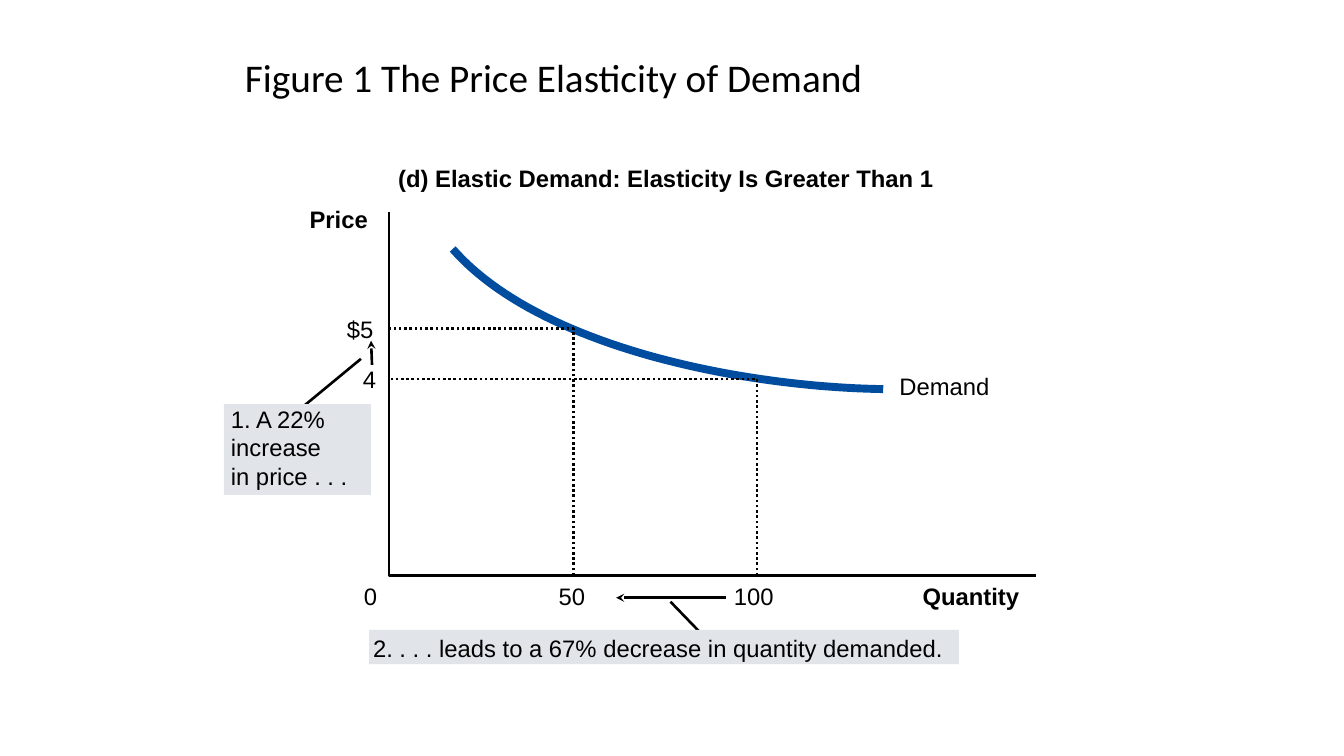
from collections import namedtuple
from dataclasses import dataclass

from lxml.etree import SubElement
from pptx import Presentation
from pptx.dml.color import RGBColor
from pptx.enum.dml import MSO_LINE
from pptx.enum.shapes import MSO_CONNECTOR, MSO_SHAPE
from pptx.enum.text import MSO_ANCHOR, MSO_AUTO_SIZE, PP_ALIGN
from pptx.oxml.ns import qn
from pptx.util import Pt

PX = 9144  # 100 px to the inch
Box = namedtuple("Box", "x y w h")


@dataclass(frozen=True)
class Theme:
    ink: RGBColor = RGBColor(0, 0, 0)
    curve: RGBColor = RGBColor(0x00, 0x4C, 0x9F)
    note: RGBColor = RGBColor(0xE1, 0xE5, 0xE9)
    title_font: str = "Calibri"
    font: str = "Arial"
    title_size: Pt = Pt(28)
    size: Pt = Pt(17)
    pitch: Pt = Pt(20.5)
    thin: Pt = Pt(1.88)
    thick: Pt = Pt(5.63)


T = Theme()


def emu(*lengths):
    return [round(v * PX) for v in lengths]


def add_run(p, text, size=T.size, font=T.font, bold=False):
    r = p.add_run()
    r.text = text
    r.font.size, r.font.name, r.font.bold = size, font, bold
    r.font.color.rgb = T.ink


def set_insets(tf, left=0, top=0):
    tf.margin_left, tf.margin_top = emu(left, top)
    tf.margin_right = tf.margin_bottom = 0


def add_label(s, x, y, w, text, bold=False):
    tf = s.shapes.add_textbox(*emu(x, y, w, 29)).text_frame
    set_insets(tf)
    tf.word_wrap = False
    tf.auto_size = MSO_AUTO_SIZE.SHAPE_TO_FIT_TEXT
    add_run(tf.paragraphs[0], text, bold=bold)


def add_path(s, points, color=T.ink, width=T.thin, dash=None):
    """Draw an open outline through points given in px."""
    start, *rest = [tuple(emu(*point)) for point in points]
    builder = s.shapes.build_freeform(*start)
    builder.add_line_segments(rest, close=False)
    sp = builder.convert_to_shape()
    sp.shadow.inherit = False
    sp.fill.background()
    sp.line.color.rgb, sp.line.width = color, width
    if dash:
        sp.line.dash_style = dash


def add_line(s, x1, y1, x2, y2, arrow=False):
    """Draw a straight line, with an optional arrowhead at its end."""
    line = s.shapes.add_connector(MSO_CONNECTOR.STRAIGHT, *emu(x1, y1, x2, y2))
    line.line.color.rgb, line.line.width = T.ink, T.thin
    if arrow:
        SubElement(line.line._get_or_add_ln(), qn("a:tailEnd"), type="stealth")
    SubElement(line._element.spPr, qn("a:effectLst"))


def bezier(p0, p1, p2, p3, steps=48):
    for i in range(steps + 1):
        t = i / steps
        u = 1 - t
        yield tuple(u**3 * a + 3 * u * u * t * b + 3 * u * t * t * c + t**3 * d
                    for a, b, c, d in zip(p0, p1, p2, p3))


def add_title(s, box):
    title = s.shapes.title
    title.left, title.top, title.width, title.height = emu(*box)
    tf = title.text_frame
    tf.vertical_anchor = MSO_ANCHOR.MIDDLE
    p = tf.paragraphs[0]
    p.alignment, p.line_spacing = PP_ALIGN.LEFT, 0.8
    add_run(p, "Figure 1 The Price Elasticity of Demand", T.title_size, T.title_font)


def add_axes(s, box):
    x, y, w, h = box
    add_path(s, [(x, y), (x, y + h), (x + w, y + h)])
    add_label(s, x + 9, y - 48, 536, "(d) Elastic Demand: Elasticity Is Greater Than 1", True)
    add_label(s, x - 79, y - 7, 59, "Price", True)
    add_label(s, x + 529, y + h + 6, 97, "Quantity", True)
    add_label(s, x - 25, y + h + 6, 13, "0")


def add_demand(s, box):
    x, y = box.x, box.y
    controls = [(63, 37), (149, 135), (352, 174), (490, 176)]
    add_path(s, bezier(*[(x + dx, y + dy) for dx, dy in controls]), T.curve, T.thick)
    add_label(s, x + 506, y + 159, 90, "Demand")


def add_guides(s, box):
    """Dot each price across to the curve and down to its quantity."""
    x, y, base = box.x, box.y, box.y + box.h
    for dx, dy, price, price_x, price_w, qty, qty_x, qty_w in (
        (365, 166, "4", -26, 13, "100", 342, 40),
        (183, 116, "$5", -42, 27, "50", 168, 27),
    ):
        add_path(s, [(x + dx, base), (x + dx, y + dy), (x, y + dy)],
                 dash=MSO_LINE.ROUND_DOT)
        add_label(s, x + price_x, y + dy - 14, price_w, price)
        add_label(s, x + qty_x, base + 6, qty_w, qty)


def add_changes(s, box):
    """Show the rise in price and the fall in quantity as arrows."""
    x, y, base = box.x, box.y, box.y + box.h
    add_line(s, x - 17, y + 152, x - 18, y + 128, arrow=True)
    add_line(s, x + 334, base + 22, x + 225, base + 22, arrow=True)


def add_note(s, box, lines, left, top, pointer):
    """Place a shaded note; pointer is a line relative to the box."""
    x1, y1, x2, y2 = pointer
    add_line(s, box.x + x1, box.y + y1, box.x + x2, box.y + y2)
    sp = s.shapes.add_shape(MSO_SHAPE.RECTANGLE, *emu(*box))
    sp.shadow.inherit = False
    sp.fill.solid()
    sp.fill.fore_color.rgb = T.note
    sp.line.fill.background()
    tf = sp.text_frame
    set_insets(tf, left, top)
    tf.word_wrap = True
    tf.vertical_anchor = MSO_ANCHOR.TOP
    for i, line in enumerate(lines):
        p = tf.add_paragraph() if i else tf.paragraphs[0]
        p.alignment = PP_ALIGN.LEFT
        if len(lines) > 1:
            p.line_spacing = T.pitch
        add_run(p, line)


def main():
    prs = Presentation()
    prs.slide_width, prs.slide_height = emu(1333, 750)
    s = prs.slides.add_slide(prs.slide_layouts[5])
    add_title(s, Box(233, 46, 884, 70))
    plot = Box(386, 210, 642, 361)
    for add_part in (add_axes, add_changes, add_demand, add_guides):
        add_part(s, plot)
    add_note(s, Box(222, 401, 146, 90), ["1. A 22%", "increase", "in price . . ."],
             7, 0, (73, 7, 136, -45))
    add_note(s, Box(366, 625, 585, 34),
             ["2. . . . leads to a 67% decrease in quantity demanded."],
             4, 4, (299, -28, 328, 2))
    prs.save("out.pptx")


if __name__ == "__main__":
    main()
